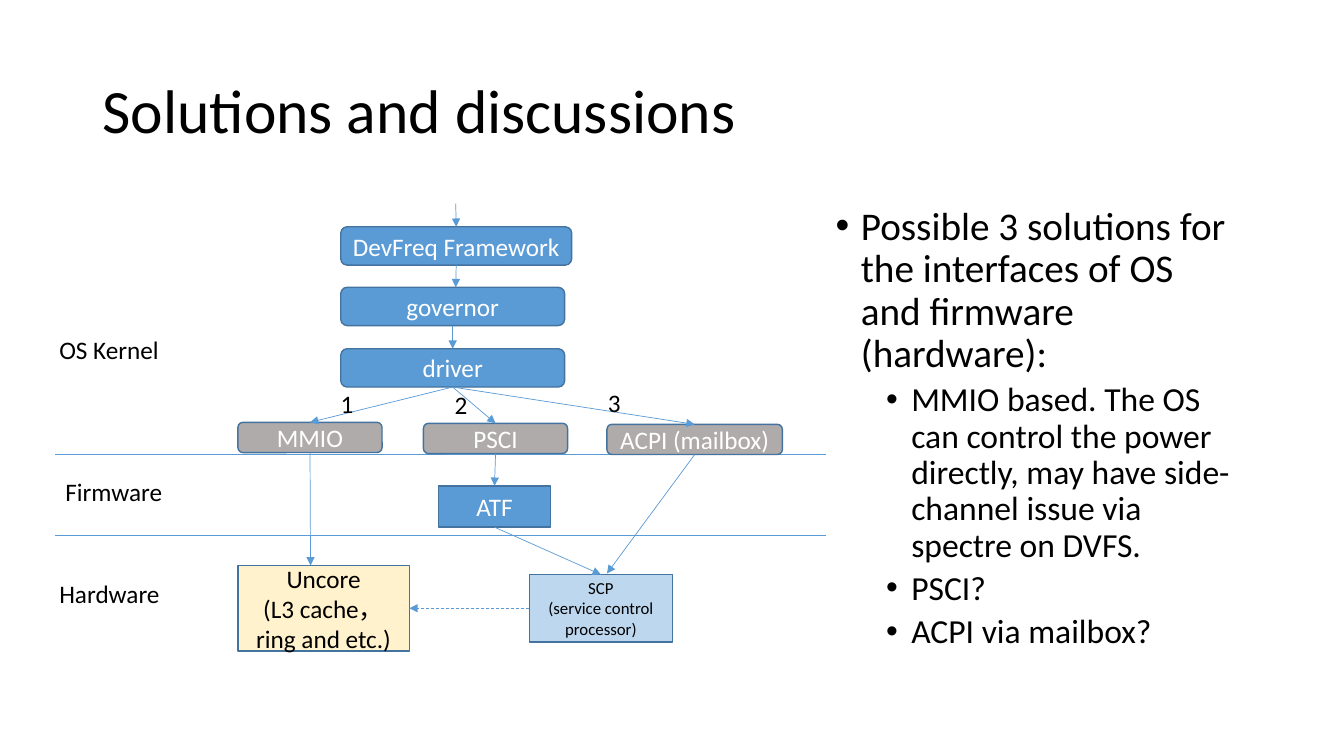
from lxml import etree
from pptx import Presentation
from pptx import util as u
from pptx.dml.color import RGBColor
from pptx.enum import dml, shapes, text
from pptx.oxml import ns

FONT = "Calibri"
BLACK = RGBColor(0x00, 0x00, 0x00)
WHITE = RGBColor(0xFF, 0xFF, 0xFF)
BLUE = RGBColor(0x5B, 0x9B, 0xD5)
DARK_BLUE = RGBColor(0x43, 0x73, 0x9E)
PALE_BLUE = RGBColor(0xBD, 0xD7, 0xEE)
CREAM = RGBColor(0xFF, 0xF2, 0xCC)
GRAY = RGBColor(0xAF, 0xAB, 0xAB)
RECT = shapes.MSO_SHAPE.RECTANGLE
ROUNDED = shapes.MSO_SHAPE.ROUNDED_RECTANGLE
TOP, LEFT, BOTTOM, RIGHT = range(4)  # connection sites


def inches(values):
    return [u.Inches(value) for value in values]


def style_text(paragraph, size, color):
    for run in paragraph.runs:
        run.font.name = FONT
        run.font.size = u.Pt(size)
        run.font.color.rgb = color


def add_text(slide, place, content, size, wrap=True):
    frame = slide.shapes.add_textbox(*inches(place)).text_frame
    frame.word_wrap = wrap
    frame.text = content
    style_text(frame.paragraphs[0], size, BLACK)
    return frame


def add_box(slide, place, content, fill, kind=ROUNDED, size=18, color=WHITE):
    box = slide.shapes.add_shape(kind, *inches(place))
    box.shadow.inherit = False
    box.fill.solid()
    box.fill.fore_color.rgb = fill
    box.line.color.rgb = DARK_BLUE
    box.line.width = u.Pt(1)
    frame = box.text_frame
    frame.word_wrap = True
    frame.vertical_anchor = text.MSO_ANCHOR.MIDDLE
    frame.text = content
    for paragraph in frame.paragraphs:
        paragraph.alignment = text.PP_ALIGN.CENTER
        style_text(paragraph, size, color)
    return box


def add_line(slide, start, end):
    line = slide.shapes.add_connector(
        shapes.MSO_CONNECTOR.STRAIGHT, *inches(start + end))
    line.line.color.rgb = BLUE
    line.line.width = u.Pt(0.5)
    etree.SubElement(line._element.spPr, ns.qn("a:effectLst"))
    return line


def add_arrow(slide, start, end, dashed=False):
    """Each end is a point (x, y) or a pair (box, connection site)."""
    joined = [not isinstance(place[0], (int, float)) for place in (start, end)]
    arrow = add_line(slide, (0, 0) if joined[0] else start,
                     (0, 0) if joined[1] else end)
    if joined[0]:
        arrow.begin_connect(*start)
    if joined[1]:
        arrow.end_connect(*end)
    if dashed:
        arrow.line.dash_style = dml.MSO_LINE.DASH
    outline = arrow.line._get_or_add_ln()
    etree.SubElement(outline, ns.qn("a:tailEnd"), type="triangle")


def add_bullets(slide, place, items):
    frame = add_text(slide, place, "\n".join(item for _, item in items), 28)
    for paragraph, (level, _) in zip(frame.paragraphs, items):
        paragraph.level = level
        paragraph.line_spacing = 0.9
        paragraph.space_before = u.Pt(5 if level else 10)
        style_text(paragraph, 24 if level else 28, BLACK)
        properties = paragraph._p.get_or_add_pPr()
        properties.set("marL", str(u.Inches(0.25 + 0.5 * level)))
        properties.set("indent", str(u.Inches(-0.25)))
        etree.SubElement(properties, ns.qn("a:buFont"), typeface="Arial")
        etree.SubElement(properties, ns.qn("a:buChar"), char="•")


def add_diagram(slide):
    # Layers: dividers and names
    for y in (4.51, 5.31):
        add_line(slide, (0.55, y), (8.19, y))
    for x, y, name in ((0.49, 3.27, "OS Kernel"), (0.55, 4.68, "Firmware"),
                       (0.49, 5.69, "Hardware")):
        add_text(slide, (x, y, 1.36, 0.41), name, 18)

    # Kernel stack
    framework = add_box(slide, (3.38, 2.25, 2.29, 0.38), "DevFreq Framework", BLUE)
    governor = add_box(slide, (3.38, 2.85, 2.22, 0.38), "governor", BLUE)
    driver = add_box(slide, (3.38, 3.46, 2.22, 0.38), "driver", BLUE)

    # Interfaces
    mmio = add_box(slide, (2.36, 4.19, 1.43, 0.3), "MMIO", GRAY)
    psci = add_box(slide, (4.2, 4.2, 1.43, 0.3), "PSCI", GRAY)
    acpi = add_box(slide, (6.02, 4.21, 1.74, 0.3), "ACPI (mailbox)", GRAY)

    # Firmware and hardware
    atf = add_box(slide, (4.35, 4.82, 1.11, 0.41), "ATF", BLUE, RECT)
    scp = add_box(slide, (5.25, 5.7, 1.42, 0.67),
                  "SCP\n(service control processor)", PALE_BLUE, RECT, 12, BLACK)
    uncore = add_box(slide, (2.36, 5.61, 1.7, 0.85),
                     "Uncore\n(L3 cache，ring and etc.)", CREAM, RECT, 18, BLACK)

    # Arrows
    add_arrow(slide, (4.52, 2.02), (framework, TOP))
    add_arrow(slide, (framework, BOTTOM), (4.52, 2.85))
    for upper, lower in ((governor, driver), (driver, mmio), (driver, psci),
                         (driver, acpi), (psci, atf), (atf, scp)):
        add_arrow(slide, (upper, BOTTOM), (lower, TOP))
    add_arrow(slide, (mmio, BOTTOM), (3.08, 5.61))
    add_arrow(slide, (acpi, BOTTOM), (6.02, 5.69))
    add_arrow(slide, (scp, LEFT), (uncore, RIGHT), dashed=True)

    # Solution numbers
    for number, (x, y) in enumerate(((3.28, 3.8), (4.41, 3.81), (5.93, 3.79)), 1):
        add_text(slide, (x, y, 0.34, 0.4), str(number), 18, wrap=False)


def main():
    presentation = Presentation()
    presentation.slide_width = u.Inches(13.33)
    presentation.slide_height = u.Inches(7.5)
    slide = presentation.slides.add_slide(presentation.slide_layouts[6])

    # Title
    title = add_text(slide, (0.92, 0.4, 11.5, 1.45), "Solutions and discussions", 44)
    title.vertical_anchor = text.MSO_ANCHOR.MIDDLE
    title.paragraphs[0].line_spacing = 0.9

    # Discussion points
    add_bullets(slide, (8.19, 2, 4.2, 4.76), (
        (0, "Possible 3 solutions for the interfaces of OS and firmware (hardware):"),
        (1, "MMIO based. The OS can control the power directly, "
            "may have side-channel issue via spectre on DVFS."),
        (1, "PSCI?"),
        (1, "ACPI via mailbox?"),
    ))

    add_diagram(slide)
    presentation.save("out.pptx")


if __name__ == "__main__":
    main()
